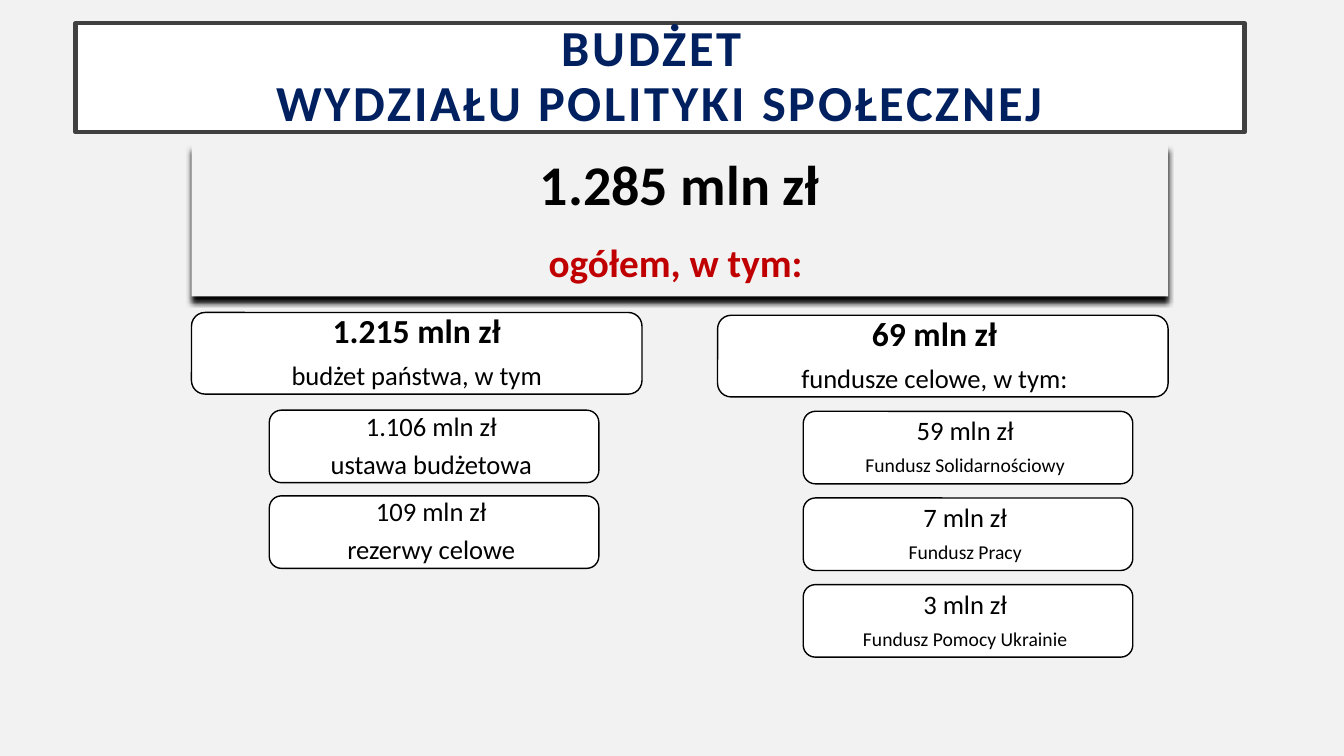
from lxml.etree import SubElement
from pptx import Presentation
from pptx.dml.color import RGBColor
from pptx.enum.shapes import MSO_SHAPE as Kind
from pptx.enum.text import MSO_ANCHOR as Anchor, MSO_AUTO_SIZE as Auto, PP_ALIGN as Align
from pptx.oxml.ns import qn
from pptx.util import Pt


def paint(target, color):
    """Give a fill, line or font a solid colour from a hex string."""
    rgb = RGBColor.from_string(color)
    if hasattr(target, "solid"):
        target.solid()
        target.fore_color.rgb = rgb
    else:
        target.color.rgb = rgb


def style(par, size, color, bold):
    """Centre a paragraph and set its font."""
    par.alignment = Align.CENTER
    font = par.font
    font.name, font.size, font.bold = "Calibri", Pt(size), bold
    paint(font, color)


def place(shape, left, top, width, height):
    """Move and size a shape."""
    shape.left, shape.top = Pt(left), Pt(top)
    shape.width, shape.height = Pt(width), Pt(height)


def inset(frame, side, edge):
    """Set the text margins of a frame and let its text wrap."""
    frame.word_wrap = True
    frame.margin_left = frame.margin_right = Pt(side)
    frame.margin_top = frame.margin_bottom = Pt(edge)


def head(slide):
    """Format the title placeholder as a framed banner."""
    title = slide.shapes.title
    place(title, 54, 16.5, 835, 78)
    paint(title.fill, "FFFFFF")
    paint(title.line, "404040")
    title.line.width = Pt(3)
    frame = title.text_frame
    frame.auto_size = Auto.NONE
    frame.vertical_anchor = Anchor.MIDDLE
    inset(frame, 21.6, 14.4)
    par = frame.paragraphs[0]
    par.add_run().text = "BUDŻET "
    par.add_line_break()
    par.add_run().text = "WYDZIAŁU POLITYKI SPOŁECZNEJ"
    style(par, 36, "002060", True)
    par.line_spacing = 0.9
    for run in par.runs:
        run.font._element.set("spc", "200")


def shade(shape):
    """Add a soft black shadow straight below a shape."""
    shape.shadow.inherit = False
    effects = shape._element.spPr.find(qn("a:effectLst"))
    outer = SubElement(effects, qn("a:outerShdw"), blurRad=str(Pt(4)),
                       dist=str(Pt(4)), dir="5400000", algn="t", rotWithShape="0")
    black = SubElement(outer, qn("a:srgbClr"), val="000000")
    SubElement(black, qn("a:alpha"), val="97000")


def band(slide):
    """Draw the shadowed band with the overall total."""
    shape = slide.shapes.add_shape(Kind.RECTANGLE, Pt(136.8), Pt(103), Pt(697.7), Pt(108.7))
    paint(shape.fill, "F2F2F2")
    shape.line.fill.background()
    shade(shape)
    frame = shape.text_frame
    frame.vertical_anchor = Anchor.TOP
    inset(frame, 7.2, 3.6)
    total, note = frame.paragraphs[0], frame.add_paragraph()
    total.text, note.text = "1.285 mln zł", "ogółem, w tym: "
    style(total, 40, "000000", True)
    style(note, 28, "C00000", True)
    total.space_after = note.space_after = Pt(6)
    note.space_before = Pt(10)


def card(slide, left, top, width, height, lines, shift=0):
    """Draw a rounded card; lines hold text, size and weight."""
    shape = slide.shapes.add_shape(Kind.ROUNDED_RECTANGLE, Pt(left), Pt(top),
                                   Pt(width), Pt(height))
    shape.shadow.inherit = False
    paint(shape.fill, "FFFFFF")
    paint(shape.line, "000000")
    shape.line.width = Pt(1)
    frame = shape.text_frame
    frame.vertical_anchor = Anchor.MIDDLE
    inset(frame, 0, 0)
    frame.margin_right = Pt(2 * shift)
    for i, (text, size, bold) in enumerate(lines):
        par = frame.add_paragraph() if i else frame.paragraphs[0]
        par.text = text
        style(par, size, "000000", bold)
        par.line_spacing = 0.9
        par.space_after = Pt(0.35 * size)


def column(slide, left, top, shift, main_item, inner, first, step, small, items):
    """Draw a main card with its smaller cards below."""
    sum_, name = main_item
    card(slide, left, top, 321.8, 58.3, [(sum_, 24, True), (name, 19, False)], shift)
    for i, (sum_, name) in enumerate(items):
        card(slide, inner, first + i * step, 235.4, 51.8,
             [(sum_, 19, False), (name, small, False)], 2)


def main():
    """Build the budget slide and save it."""
    deck = Presentation()
    deck.slide_width, deck.slide_height = Pt(960), Pt(540)
    slide = deck.slides.add_slide(deck.slide_layouts[5])
    paint(slide.background.fill, "F2F2F2")
    head(slide)
    band(slide)
    column(slide, 136.8, 223.2, 0, ("1.215 mln zł", "budżet państwa, w tym"),
           192.4, 293, 61.2, 19,
           [("1.106 mln zł", "ustawa budżetowa"), ("109 mln zł", "rezerwy celowe")])
    column(slide, 512.6, 225.2, 6, ("69 mln zł", "fundusze celowe, w tym:"),
           573.8, 293.8, 61.9, 14,
           [("59 mln zł", "Fundusz Solidarnościowy"), ("7 mln zł", "Fundusz Pracy"),
            ("3 mln zł", "Fundusz Pomocy Ukrainie")])
    deck.save("out.pptx")


if __name__ == "__main__":
    main()
